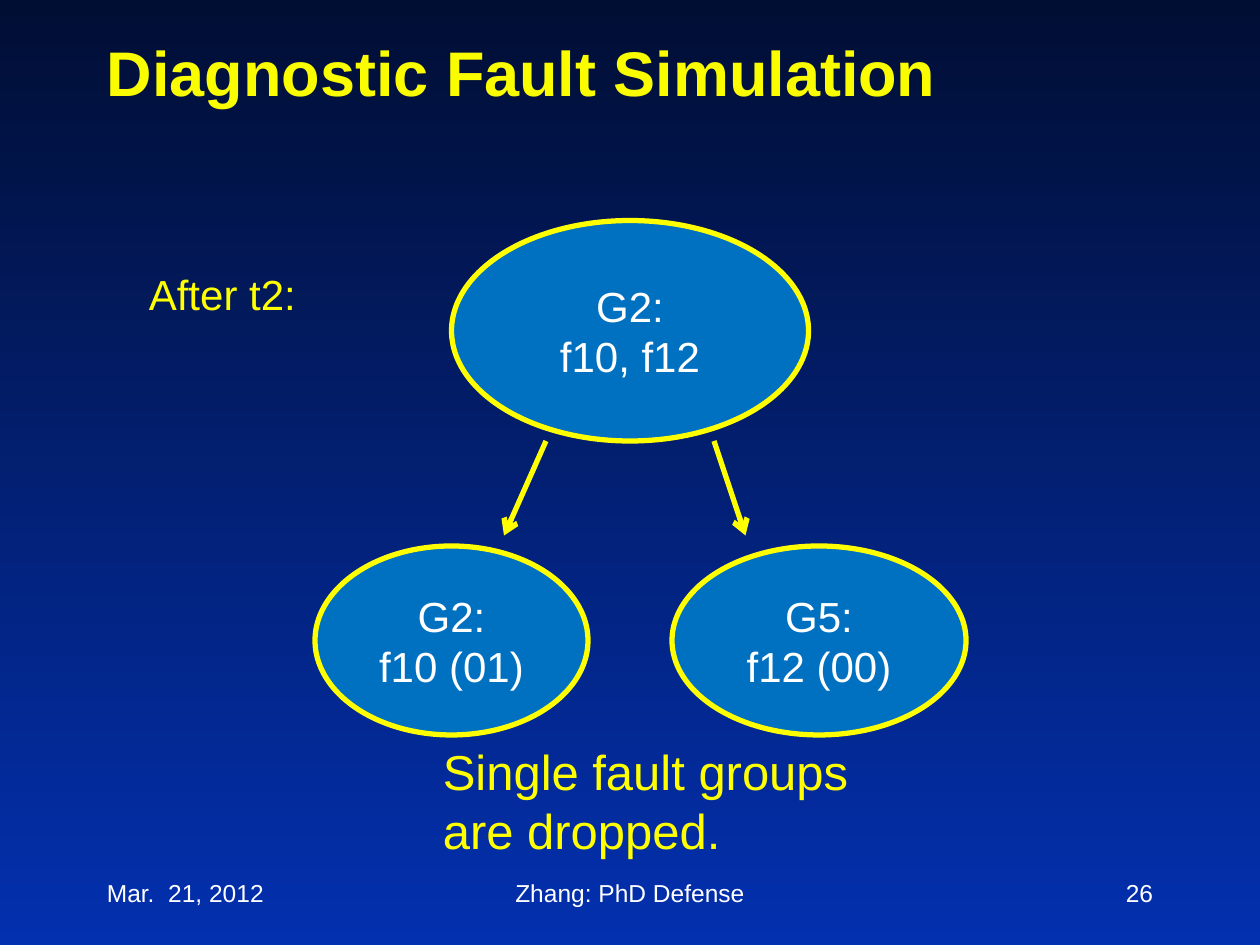
from dataclasses import dataclass

from lxml import etree
from pptx import Presentation
from pptx.dml.color import RGBColor
from pptx.enum.shapes import MSO_CONNECTOR, MSO_SHAPE
from pptx.enum.text import MSO_ANCHOR, PP_ALIGN
from pptx.oxml.ns import qn
from pptx.util import Pt

LEFT, CENTER, RIGHT = PP_ALIGN.LEFT, PP_ALIGN.CENTER, PP_ALIGN.RIGHT
TOP, MIDDLE, BOTTOM = MSO_ANCHOR.TOP, MSO_ANCHOR.MIDDLE, MSO_ANCHOR.BOTTOM
OVAL = MSO_SHAPE.OVAL
STRAIGHT = MSO_CONNECTOR.STRAIGHT

FONT = "Arial"
TITLE_YELLOW, YELLOW, WHITE, BLUE = "FAFD00", "FFFF00", "FFFFFF", "0070C0"
BACKGROUND = ("010E34", "0330AF")
LINE_WIDTH = 3
FOOTER_TOP, FOOTER_HEIGHT = 492, 36


@dataclass
class Box:
    left: float
    top: float
    width: float
    height: float


@dataclass
class Label:
    text: str
    box: Box
    size: float
    color: str = YELLOW
    align: PP_ALIGN = LEFT
    anchor: MSO_ANCHOR = TOP
    bold: bool = False


@dataclass
class FaultGroup:
    name: str
    faults: str
    box: Box


@dataclass
class Arrow:
    start: tuple[float, float]
    end: tuple[float, float]


LABELS = [
    Label("Diagnostic Fault Simulation", Box(54, 18, 612, 48), 36,
          TITLE_YELLOW, anchor=BOTTOM, bold=True),
    Label("After t2:", Box(78, 150, 108, 36), 24),
    Label("Single fault groups are dropped.", Box(246, 420, 282, 75), 28),
]
FOOTERS = [
    Label(text, Box(left, FOOTER_TOP, width, FOOTER_HEIGHT), 14, WHITE, align, MIDDLE)
    for text, left, width, align in [
        ("Mar.  21, 2012", 54, 150, LEFT),
        ("Zhang: PhD Defense", 246, 228, CENTER),
        ("26", 516, 150, RIGHT),
    ]
]
GROUPS = [
    FaultGroup("G2:", "f10, f12", Box(258, 126, 204, 126)),
    FaultGroup("G2:", "f10 (01)", Box(180, 312, 156, 108)),
    FaultGroup("G5:", "f12 (00)", Box(384, 312, 168, 108)),
]
ARROWS = [
    Arrow((312, 252), (288, 306)),
    Arrow((408, 252), (426, 306)),
]


def rgb(color: str) -> RGBColor:
    return RGBColor.from_string(color)


def in_points(box: Box) -> list[Pt]:
    return [Pt(value) for value in (box.left, box.top, box.width, box.height)]


def write_lines(shape, lines: list[str], size: float, color: str,
                align: PP_ALIGN, anchor: MSO_ANCHOR, bold: bool = False) -> None:
    frame = shape.text_frame
    frame.word_wrap = True
    frame.vertical_anchor = anchor
    frame.text = "\n".join(lines)
    font_format = {"name": FONT, "size": Pt(size), "bold": bold}
    for paragraph in frame.paragraphs:
        paragraph.alignment = align
        font = paragraph.runs[0].font
        for attribute, value in font_format.items():
            setattr(font, attribute, value)
        font.color.rgb = rgb(color)


def style_line(line) -> None:
    line.color.rgb = rgb(YELLOW)
    line.width = Pt(LINE_WIDTH)


def draw_label(slide, label: Label) -> None:
    shape = slide.shapes.add_textbox(*in_points(label.box))
    write_lines(shape, [label.text], label.size, label.color,
                label.align, label.anchor, label.bold)


def draw_group(slide, group: FaultGroup) -> None:
    shape = slide.shapes.add_shape(OVAL, *in_points(group.box))
    shape.shadow.inherit = False
    shape.fill.solid()
    shape.fill.fore_color.rgb = rgb(BLUE)
    style_line(shape.line)
    write_lines(shape, [group.name, group.faults], 24, WHITE, CENTER, MIDDLE)


def draw_arrow(slide, arrow: Arrow) -> None:
    ends = [Pt(value) for value in arrow.start + arrow.end]
    connector = slide.shapes.add_connector(STRAIGHT, *ends)
    style_line(connector.line)
    line_xml = connector.line._get_or_add_ln()
    etree.SubElement(line_xml, qn("a:tailEnd"), type="arrow")
    etree.SubElement(connector._element.spPr, qn("a:effectLst"))


def paint_background(slide) -> None:
    fill = slide.background.fill
    fill.gradient()
    fill.gradient_angle = 270
    for stop, color in zip(fill.gradient_stops, BACKGROUND):
        stop.color.rgb = rgb(color)


def main() -> None:
    presentation = Presentation()
    presentation.slide_width, presentation.slide_height = Pt(720), Pt(540)
    slide = presentation.slides.add_slide(presentation.slide_layouts[6])
    paint_background(slide)
    for group in GROUPS:
        draw_group(slide, group)
    for arrow in ARROWS:
        draw_arrow(slide, arrow)
    for label in LABELS + FOOTERS:
        draw_label(slide, label)
    presentation.save("out.pptx")


if __name__ == "__main__":
    main()
